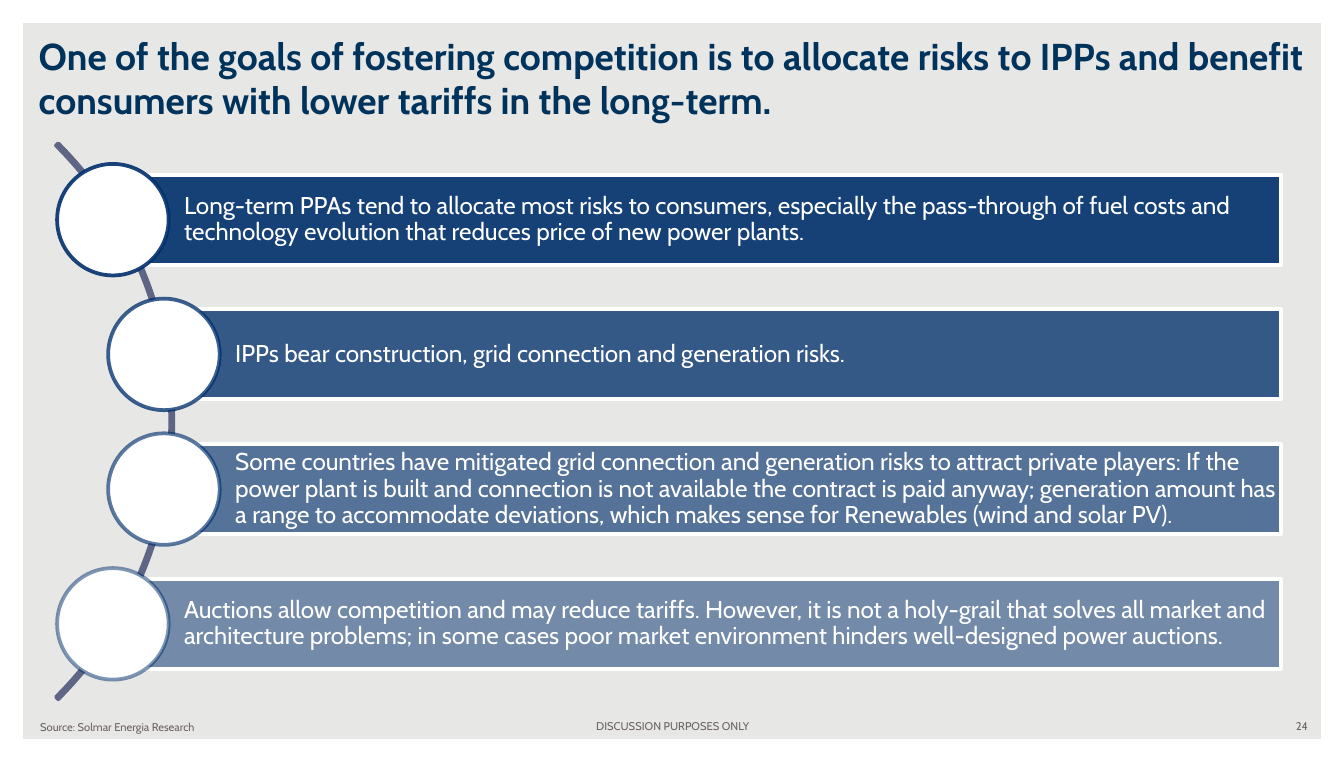
from lxml.etree import SubElement
from pptx import Presentation
from pptx.dml.color import RGBColor
from pptx.enum.shapes import MSO_SHAPE
from pptx.enum.text import MSO_ANCHOR, PP_ALIGN
from pptx.oxml.ns import qn
from pptx.util import Inches, Pt

TITLE = (
    "One of the goals of fostering competition is to allocate risks to IPPs "
    "and benefit consumers with lower tariffs in the long-term."
)
POINTS = [
    {"bar_left": 0.84, "opacity": 90, "text":
        "Long-term PPAs tend to allocate most risks to consumers, especially the "
        "pass-through of fuel costs and technology evolution that reduces price of "
        "new power plants."},
    {"bar_left": 1.22, "opacity": 77, "text":
        "IPPs bear construction, grid connection and generation risks."},
    {"bar_left": 1.22, "opacity": 63, "text":
        "Some countries have mitigated grid connection and generation risks to "
        "attract private players: If the power plant is built and connection is not "
        "available the contract is paid anyway; generation amount has a range to "
        "accommodate deviations, which makes sense for Renewables (wind and solar PV)."},
    {"bar_left": 0.84, "opacity": 50, "text":
        "Auctions allow competition and may reduce tariffs. However, it is not a "
        "holy-grail that solves all market and architecture problems; in some cases "
        "poor market environment hinders well-designed power auctions."},
]
FOOTERS = [
    ("DISCUSSION PURPOSES ONLY", 3.42, 5.3, 3.17, PP_ALIGN.CENTER),
    ("24", 7.5, 5.3, 2.33, PP_ALIGN.RIGHT),
    ("Source: Solmar Energia Research", 0.2, 5.31, 3.17, PP_ALIGN.LEFT),
]

FONT = "Cabin"
WHITE = "FFFFFF"
NAVY = "002F6C"
WIDTH, HEIGHT = 10, 5.67
BAR_RIGHT, BAR_HEIGHT = 9.53, 0.67
FIRST_BAR_TOP, BAR_STEP = 1.3, 1.0025
CIRCLE_SIZE = 0.83


def color(value):
    return RGBColor.from_string(value)


def paint(color_format, value, opacity=100):
    color_format.fore_color.rgb = color(value)
    if opacity < 100:
        element = color_format._xPr.find(f"{qn('a:solidFill')}/{qn('a:srgbClr')}")
        SubElement(element, qn("a:alpha"), val=str(opacity * 1000))


def add_shape(slide, kind, left, top, width, height, fill=None, fill_opacity=100,
              line=None, line_opacity=100):
    shape = slide.shapes.add_shape(
        kind, Inches(left), Inches(top), Inches(width), Inches(height))
    shape.shadow.inherit = False
    if fill:
        shape.fill.solid()
        paint(shape.fill, fill, fill_opacity)
    else:
        shape.fill.background()
    if line:
        shape.line.width = Pt(2)
        shape.line.fill.solid()
        paint(shape.line.fill, line, line_opacity)
    else:
        shape.line.fill.background()
    return shape


def write(shape, text, size, value, bold=False, align=PP_ALIGN.LEFT,
          anchor=MSO_ANCHOR.MIDDLE, margins=(0.1, 0.05, 0.1, 0.05), spacing=None):
    frame = shape.text_frame
    frame.word_wrap = True
    frame.vertical_anchor = anchor
    (frame.margin_left, frame.margin_top,
     frame.margin_right, frame.margin_bottom) = map(Inches, margins)
    paragraph = frame.paragraphs[0]
    paragraph.alignment = align
    if spacing:
        paragraph.line_spacing = spacing
    run = paragraph.add_run()
    run.text = text
    run.font.name = FONT
    run.font.size = Pt(size)
    run.font.bold = bold
    run.font.color.rgb = color(value)


def add_text(slide, text, left, top, width, height, **text_format):
    box = slide.shapes.add_textbox(
        Inches(left), Inches(top), Inches(width), Inches(height))
    write(box, text, **text_format)


def add_point(slide, index, point):
    left = point["bar_left"]
    top = FIRST_BAR_TOP + index * BAR_STEP
    opacity = point["opacity"]
    bar = add_shape(slide, MSO_SHAPE.RECTANGLE, left, top, BAR_RIGHT - left, BAR_HEIGHT,
                    fill=NAVY, fill_opacity=opacity, line=WHITE)
    write(bar, point["text"], size=13, value=WHITE, spacing=0.9,
          margins=(0.53, 0.04, 0.04, 0.04))
    add_shape(slide, MSO_SHAPE.OVAL, left - CIRCLE_SIZE / 2,
              top + (BAR_HEIGHT - CIRCLE_SIZE) / 2, CIRCLE_SIZE, CIRCLE_SIZE,
              fill=WHITE, line=NAVY, line_opacity=opacity)


def main():
    presentation = Presentation()
    presentation.slide_width = Inches(WIDTH)
    presentation.slide_height = Inches(HEIGHT)
    slide = presentation.slides.add_slide(presentation.slide_layouts[6])
    slide.background.fill.solid()
    slide.background.fill.fore_color.rgb = color("E7E7E5")

    border = add_shape(slide, MSO_SHAPE.FRAME, 0, 0, WIDTH, HEIGHT, fill=WHITE)
    border.adjustments[0] = 0.03
    for text, left, top, width, align in FOOTERS:
        add_text(slide, text, left, top, width, 0.2, size=6, value="6C6463", align=align)

    arc = add_shape(slide, MSO_SHAPE.BLOCK_ARC, -4.56, 0.21, 5.85, 5.85, line="5E6585")
    for index, adjustment in enumerate((189, 27, 0.004)):
        arc.adjustments[index] = adjustment
    for index, point in enumerate(POINTS):
        add_point(slide, index, point)

    add_text(slide, TITLE, 0.19, 0.19, 9.64, 0.77, size=20, value="00335C",
             bold=True, anchor=MSO_ANCHOR.BOTTOM)
    presentation.save("out.pptx")


if __name__ == "__main__":
    main()
